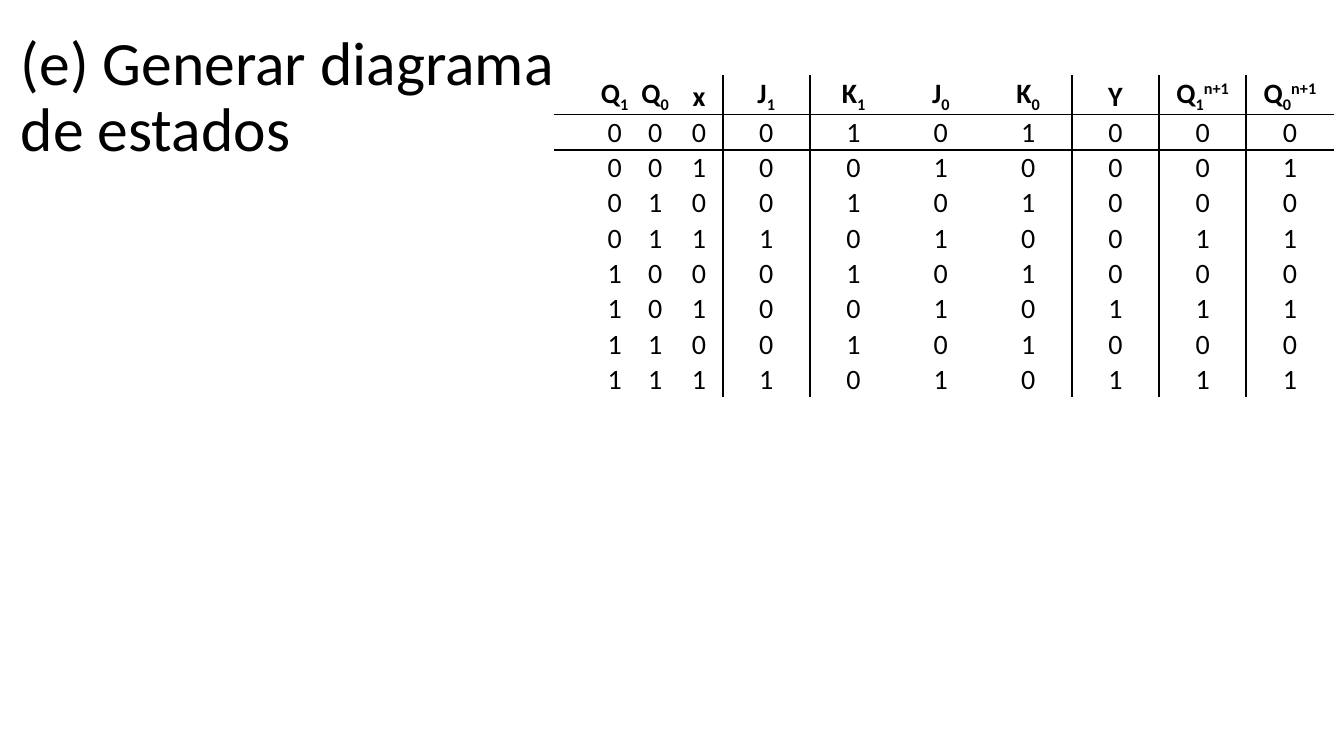
from itertools import product
from typing import NamedTuple

from lxml import etree
from pptx import Presentation
from pptx import util as u
from pptx.dml.color import RGBColor
from pptx.enum import text
from pptx.oxml.ns import qn

INK = {"text": "000000", "rule": "000000"}
FONT = "Calibri"
PLAIN = "{2D5ABB26-0587-4C30-8999-92F81FD0307C}"
HEAD, ROW = u.Cm(0.98), u.Cm(0.89)


class Column(NamedTuple):
    width: float
    base: str = ""
    sub: str = ""
    sup: str = ""
    rule: bool = False


COLUMNS = [
    Column(1.02),
    Column(1.02, "Q", "1"),
    Column(1.02, "Q", "0"),
    Column(1.19, "x", rule=True),
    Column(2.2, "J", "1"),
    Column(2.2, "K", "1"),
    Column(2.2, "J", "0"),
    Column(2.2, "K", "0", rule=True),
    Column(2.2, "Y", rule=True),
    Column(2.2, "Q", "1", "n+1"),
    Column(2.2, "Q", "0", "n+1"),
]


def state(q1: int, q0: int, x: int) -> list[int]:
    j1, k1, j0, k0 = q0 & x, 1 - x, x, 1 - x
    next1 = j1 if q1 == 0 else 1 - k1
    next0 = j0 if q0 == 0 else 1 - k0
    return [q1, q0, x, j1, k1, j0, k0, q1 & x, next1, next0]


def style(par, size: int, bold: bool = False) -> None:
    par.font.name = FONT
    par.font.size = u.Pt(size)
    par.font.bold = bold
    par.font.color.rgb = RGBColor.from_string(INK["text"])


def edge(cell, side: str) -> None:
    line = etree.SubElement(cell._tc.get_or_add_tcPr(), qn(f"a:ln{side}"), w=str(u.Pt(1.5)))
    fill = etree.SubElement(line, qn("a:solidFill"))
    etree.SubElement(fill, qn("a:srgbClr"), val=INK["rule"])


def write(cell, parts: list[tuple[str, int]], bold: bool) -> None:
    cell.margin_left = cell.margin_right = cell.margin_top = u.Cm(0.03)
    cell.margin_bottom = 0
    cell.vertical_anchor = text.MSO_ANCHOR.BOTTOM
    par = cell.text_frame.paragraphs[0]
    par.alignment = text.PP_ALIGN.CENTER
    style(par, 20, bold)
    for word, shift in parts:
        if word:
            run = par.add_run()
            run.text = word
            if shift:
                run._r.get_or_add_rPr().set("baseline", str(shift * 1000))


def draw_title(slide) -> None:
    box = slide.shapes.add_textbox(u.Cm(0.28), u.Cm(0.64), u.Cm(14.35), u.Cm(3.68))
    frame = box.text_frame
    frame.word_wrap = True
    frame.vertical_anchor = text.MSO_ANCHOR.MIDDLE
    par = frame.paragraphs[0]
    par.text = "(e) Generar diagrama de estados"
    par.line_spacing = 0.9
    style(par, 44)


def draw_table(slide) -> None:
    rows = [state(*bits) for bits in product((0, 1), repeat=3)]
    width = u.Cm(sum(col.width for col in COLUMNS))
    frame = slide.shapes.add_table(
        len(rows) + 1, len(COLUMNS), u.Cm(13.96), u.Cm(1.89), width, HEAD + ROW * len(rows)
    )
    table = frame.table
    table.first_row = table.horz_banding = False
    table._tbl.tblPr.find(qn("a:tableStyleId")).text = PLAIN
    for c, col in enumerate(COLUMNS):
        table.columns[c].width = u.Cm(col.width)
        for r in range(len(rows) + 1):
            table.rows[r].height = ROW if r else HEAD
            cell = table.cell(r, c)
            sides = {
                "L": c > 0 and COLUMNS[c - 1].rule,
                "R": col.rule,
                "T": r == 1,
                "B": r == 0,
            }
            for side, drawn in sides.items():
                if drawn:
                    edge(cell, side)
            cell.fill.background()
            if r == 0:
                parts = [(col.base, 0), (col.sub, -25), (col.sup, 30)]
            else:
                parts = [(str(rows[r - 1][c - 1]), 0)] if c else []
            write(cell, parts, r == 0)


def main() -> None:
    deck = Presentation()
    deck.slide_width, deck.slide_height = u.Cm(33.87), u.Cm(19.05)
    slide = deck.slides.add_slide(deck.slide_layouts[6])
    draw_title(slide)
    draw_table(slide)
    deck.save("out.pptx")


if __name__ == "__main__":
    main()
